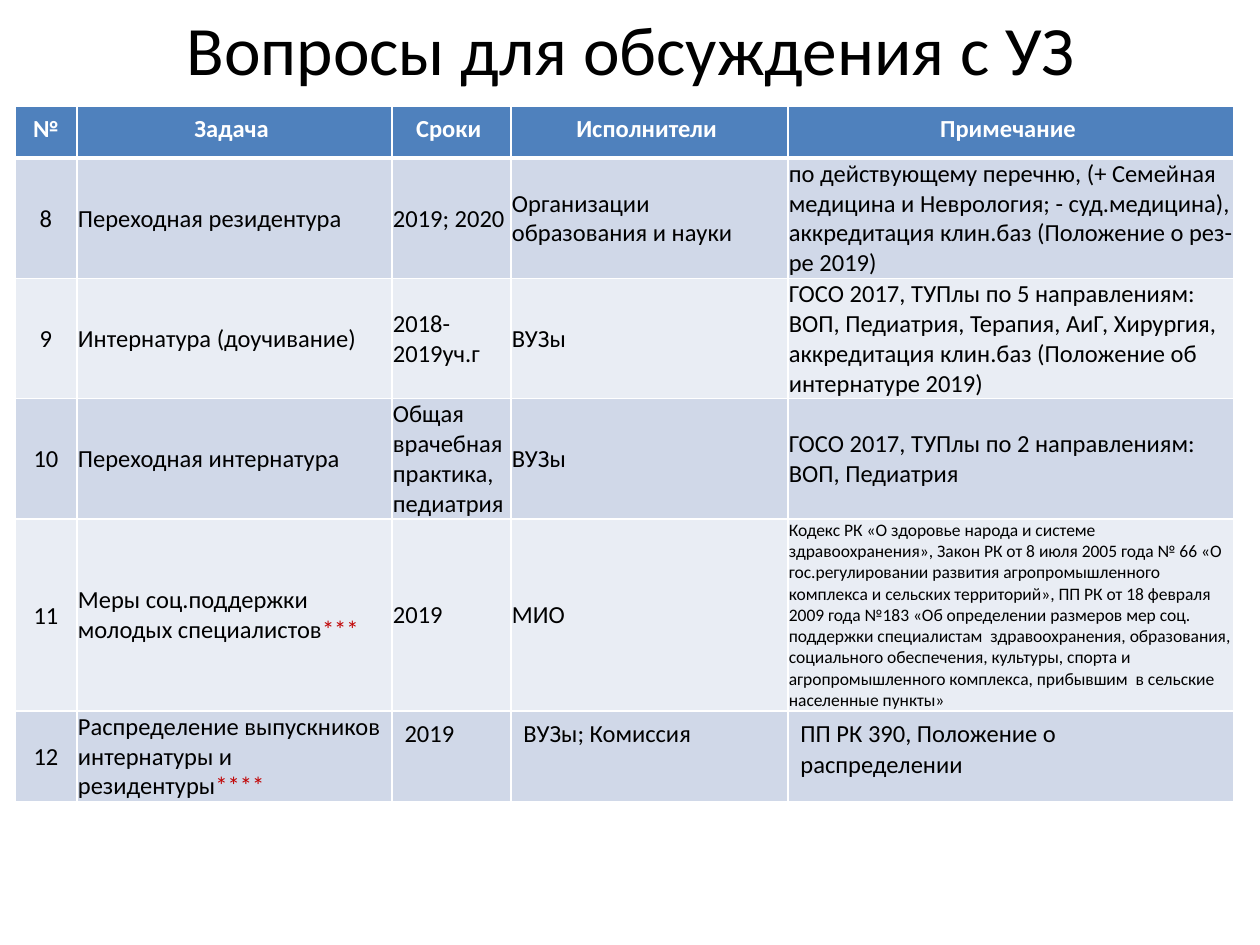
from lxml import etree
from pptx import Presentation
from pptx.dml.color import RGBColor
from pptx.enum.text import MSO_ANCHOR, PP_ALIGN
from pptx.oxml.ns import qn
from pptx.util import Pt

CENTER, LEFT = PP_ALIGN.CENTER, PP_ALIGN.LEFT
TOP, MIDDLE = MSO_ANCHOR.TOP, MSO_ANCHOR.MIDDLE

BLACK = RGBColor(0x00, 0x00, 0x00)
WHITE = RGBColor(0xFF, 0xFF, 0xFF)
RED = RGBColor(0xC0, 0x00, 0x00)
HEADER_BLUE = RGBColor(0x4F, 0x81, 0xBD)
BANDS = (RGBColor(0xD0, 0xD8, 0xE8), RGBColor(0xE9, 0xED, 0xF4))

EMU_PER_PX = 914400 / 126
SLIDE_SIZE = (1260, 945)
TITLE_ONLY = 5

TITLE = "Вопросы для обсуждения с УЗ"
COLUMN_WIDTHS = (62, 315, 119, 277, 446)
ROW_HEIGHT = 52
HEADERS = ("№", "Задача ", "Сроки ", "Исполнители ", "Примечание ")
# Number, task, footnote stars, dates, responsible, note
TASKS = (
    ("8", "Переходная резидентура", "", "2019; 2020",
     "Организации образования и науки",
     "по действующему перечню, (+ Семейная медицина и Неврология; "
     "- суд.медицина), аккредитация клин.баз (Положение о рез-ре 2019)"),
    ("9", "Интернатура (доучивание)", "", "2018-2019уч.г", "ВУЗы",
     "ГОСО 2017, ТУПлы по 5 направлениям: ВОП, Педиатрия, Терапия, АиГ, "
     "Хирургия, аккредитация клин.баз (Положение об интернатуре 2019)"),
    ("10", "Переходная интернатура", "",
     "Общая врачебная практика, педиатрия", "ВУЗы",
     "ГОСО 2017, ТУПлы по 2 направлениям: ВОП, Педиатрия"),
    ("11", "Меры соц.поддержки молодых специалистов", "***", "2019", "МИО",
     "Кодекс РК «О здоровье народа и системе здравоохранения», Закон РК "
     "от 8 июля 2005 года № 66 «О гос.регулировании развития "
     "агропромышленного комплекса и сельских территорий», ПП РК от 18 "
     "февраля 2009 года №183 «Об определении размеров мер соц. поддержки "
     "специалистам  здравоохранения, образования, социального "
     "обеспечения, культуры, спорта и агропромышленного комплекса, "
     "прибывшим  в сельские населенные пункты»"),
    ("12", "Распределение выпускников интернатуры и резидентуры", "****",
     "2019", "ВУЗы; Комиссия", "ПП РК 390, Положение о распределении"),
)
LEGAL_NOTE_TASK = "11"
LOOSE_TASK = "12"


def px(length):
    return round(length * EMU_PER_PX)


class SlideBuilder:
    font = "Calibri"
    title_size = 39.6
    text_size = 14
    small_size = 10
    line_spacing = Pt(18)

    def __init__(self, slide):
        self.slide = slide

    def add_text(self, paragraph, text, size, color=BLACK, bold=False):
        run = paragraph.add_run()
        run.text = text
        run.font.name = self.font
        run.font.size = Pt(size)
        run.font.bold = bold
        run.font.color.rgb = color

    def title(self, text, left, top, width, height):
        heading = self.slide.shapes.title
        heading.left, heading.top = px(left), px(top)
        heading.width, heading.height = px(width), px(height)
        heading.text_frame.vertical_anchor = MIDDLE
        paragraph = heading.text_frame.paragraphs[0]
        paragraph.alignment = CENTER
        self.add_text(paragraph, text, self.title_size)

    def table(self, left, top, height, row_count):
        frame = self.slide.shapes.add_table(
            row_count, len(COLUMN_WIDTHS), px(left), px(top),
            px(sum(COLUMN_WIDTHS)), px(height))
        for column, width in zip(frame.table.columns, COLUMN_WIDTHS):
            column.width = px(width)
        for row in frame.table.rows:
            row.height = px(ROW_HEIGHT)
        frame.height = px(height)
        return frame.table

    def borders(self, cell, **widths):
        properties = cell._tc.get_or_add_tcPr()
        for side, width in widths.items():
            line = etree.SubElement(properties, qn(f"a:ln{side}"), w=str(Pt(width)))
            fill = etree.SubElement(line, qn("a:solidFill"))
            etree.SubElement(fill, qn("a:srgbClr"), val=str(WHITE))

    def cell(self, cell, runs, fill, align=LEFT, anchor=MIDDLE, tight=False,
             size=text_size, bold=False):
        cell.fill.solid()
        cell.fill.fore_color.rgb = fill
        cell.vertical_anchor = anchor
        paragraph = cell.text_frame.paragraphs[0]
        paragraph.alignment = align
        if tight:
            cell.margin_left = cell.margin_top = cell.margin_right = px(1)
            cell.margin_bottom = 0
        else:
            paragraph.line_spacing = self.line_spacing
        for text, color in runs:
            self.add_text(paragraph, text, size, color, bold)


def main():
    presentation = Presentation()
    presentation.slide_width, presentation.slide_height = map(px, SLIDE_SIZE)
    layout = presentation.slide_layouts[TITLE_ONLY]
    builder = SlideBuilder(presentation.slides.add_slide(layout))

    builder.title(TITLE, 64, 0, 1134, 96)
    agenda = builder.table(15, 106, 687, len(TASKS) + 1)

    # Header row
    for column, header in enumerate(HEADERS):
        header_cell = agenda.cell(0, column)
        builder.borders(header_cell, L=1, R=1, T=1, B=3)
        builder.cell(header_cell, [(header, WHITE)], HEADER_BLUE, CENTER, TOP,
                     bold=True)

    # Task rows in alternating bands
    for row, (number, task, stars, *details) in enumerate(TASKS, start=1):
        band = BANDS[(row - 1) % 2]
        builder.cell(agenda.cell(row, 0), [(number, BLACK)], band, CENTER)
        task_runs = [(task, BLACK)] + ([(stars, RED)] if stars else [])
        builder.cell(agenda.cell(row, 1), task_runs, band, tight=True)

        loose = number == LOOSE_TASK
        for column, detail in enumerate(details, start=2):
            legal_note = number == LEGAL_NOTE_TASK and column == 4
            builder.cell(agenda.cell(row, column), [(detail, BLACK)], band,
                         anchor=TOP if loose else MIDDLE, tight=not loose,
                         size=builder.small_size if legal_note else builder.text_size)

    presentation.save("out.pptx")


if __name__ == "__main__":
    main()
